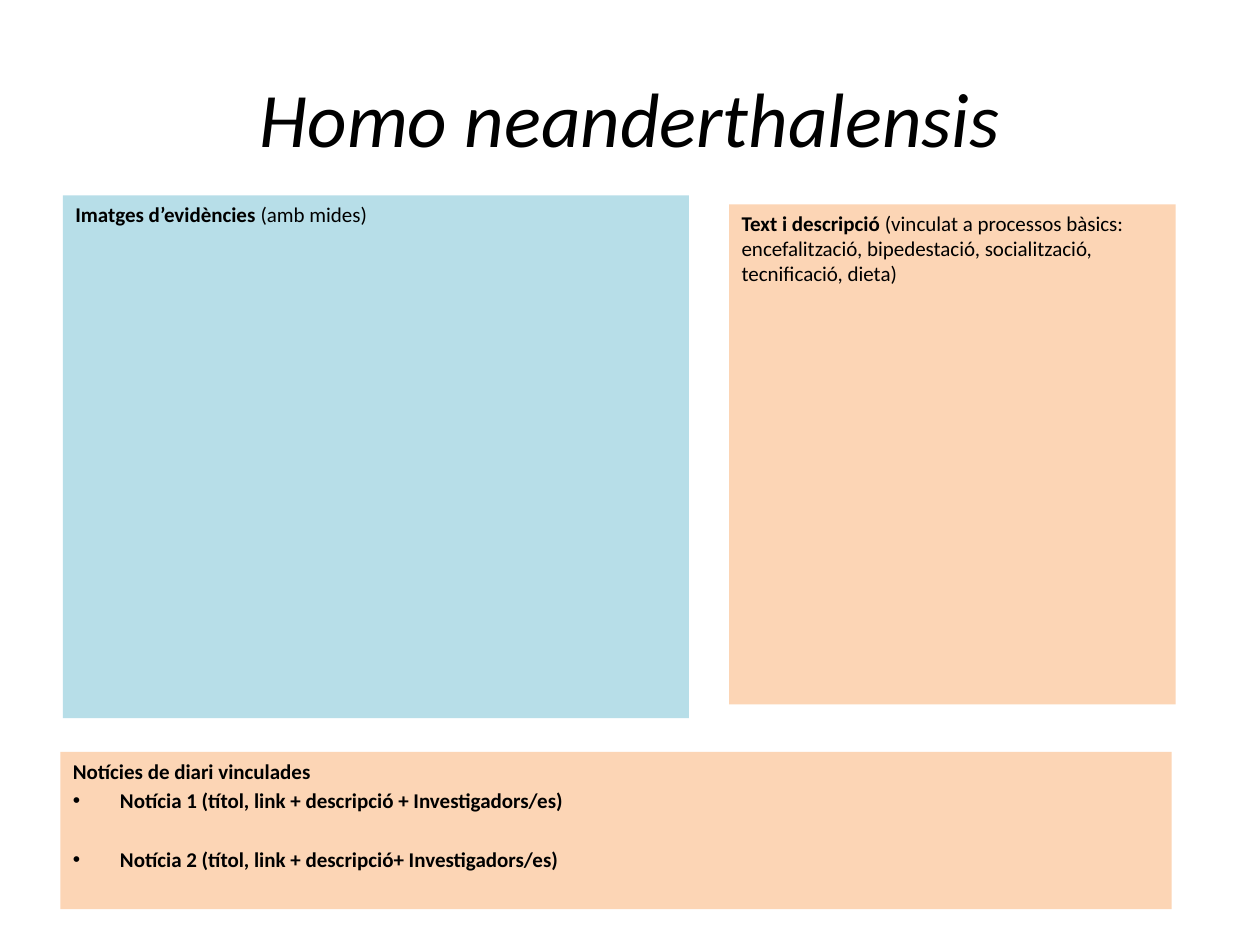
from dataclasses import dataclass

from lxml.etree import SubElement
from pptx import Presentation
from pptx.dml.color import RGBColor
from pptx.enum.shapes import MSO_SHAPE
from pptx.enum.text import MSO_ANCHOR, PP_ALIGN
from pptx.oxml.ns import qn
from pptx.util import Cm, Pt


@dataclass(frozen=True)
class Theme:
    font: str = "Calibri"
    text: RGBColor = RGBColor(0x00, 0x00, 0x00)
    blue: RGBColor = RGBColor(0xB7, 0xDE, 0xE8)
    orange: RGBColor = RGBColor(0xFC, 0xD5, 0xB5)
    title_size: Pt = Pt(44)
    body_size: Pt = Pt(12)
    line_gap: Pt = Pt(2.4)
    news_gap: Pt = Pt(19.1)


theme = Theme()


def add_run(paragraph, text, size, bold=False, italic=False):
    run = paragraph.add_run()
    run.text = text
    run.font.name = theme.font
    run.font.size = size
    run.font.bold = bold
    run.font.italic = italic
    run.font.color.rgb = theme.text


def add_bullet(paragraph, indent):
    """Give the paragraph a round bullet with a hanging indent."""
    properties = paragraph._p.get_or_add_pPr()
    properties.set("marL", str(indent))
    properties.set("indent", str(-indent))
    SubElement(properties, qn("a:buFont"), typeface="Arial")
    SubElement(properties, qn("a:buChar"), char="•")


presentation = Presentation()
presentation.slide_width = Cm(25.4)
presentation.slide_height = Cm(19.05)
slide = presentation.slides.add_slide(presentation.slide_layouts[5])

title = slide.shapes.title
title.left, title.top, title.width, title.height = Cm(1.27), Cm(0.76), Cm(22.86), Cm(3.18)
title.text_frame.vertical_anchor = MSO_ANCHOR.MIDDLE
title_paragraph = title.text_frame.paragraphs[0]
title_paragraph.alignment = PP_ALIGN.CENTER
add_run(title_paragraph, "Homo neanderthalensis", theme.title_size, italic=True)

# Each panel: left, top, width, height, fill, bold heading, plain note, bullets
panels = [
    (1.27, 3.94, 12.62, 10.54, theme.blue, "Imatges d’evidències ", "(amb mides)", []),
    (14.7, 4.12, 9, 10.08, theme.orange, "Text i descripció ",
     "(vinculat a processos bàsics: encefalització, bipedestació, "
     "socialització, tecnificació, dieta)", []),
    (1.22, 15.16, 22.4, 3.17, theme.orange, "Notícies de diari vinculades", "",
     ["Notícia 1 (títol, link + descripció + Investigadors/es)",
      "Notícia 2 (títol, link + descripció+ Investigadors/es)"]),
]

for left, top, width, height, fill, heading, note, bullets in panels:
    panel = slide.shapes.add_shape(
        MSO_SHAPE.RECTANGLE, Cm(left), Cm(top), Cm(width), Cm(height))
    panel.shadow.inherit = False
    panel.fill.solid()
    panel.fill.fore_color.rgb = fill
    panel.line.fill.background()

    frame = panel.text_frame
    frame.word_wrap = True
    frame.vertical_anchor = MSO_ANCHOR.TOP
    paragraph = frame.paragraphs[0]
    paragraph.alignment = PP_ALIGN.LEFT
    paragraph.space_before = theme.line_gap
    add_run(paragraph, heading, theme.body_size, bold=True)
    if note:
        add_run(paragraph, note, theme.body_size)

    for index, bullet in enumerate(bullets):
        paragraph = frame.add_paragraph()
        paragraph.alignment = PP_ALIGN.LEFT
        paragraph.space_before = theme.news_gap if index else theme.line_gap
        add_bullet(paragraph, Cm(0.95))
        add_run(paragraph, bullet, theme.body_size, bold=True)

presentation.save("out.pptx")
